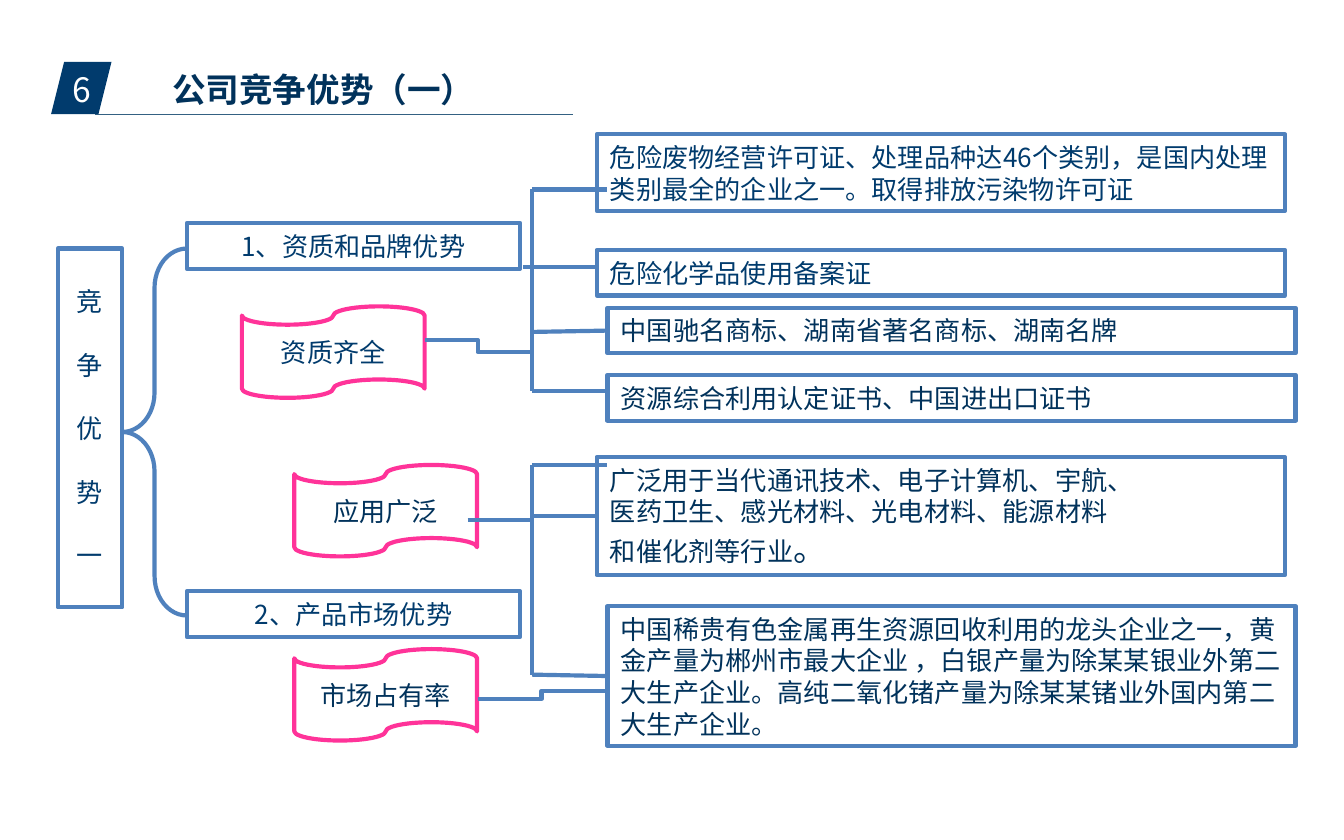
from pptx import Presentation
from pptx.dml.color import RGBColor
from pptx.enum.shapes import MSO_CONNECTOR, MSO_SHAPE
from pptx.enum.text import MSO_ANCHOR, PP_ALIGN
from pptx.oxml.ns import qn
from pptx.util import Inches, Pt
from lxml import etree

RECT, TAPE = MSO_SHAPE.RECTANGLE, MSO_SHAPE.FLOWCHART_PUNCHED_TAPE
BRACE, SLANT = MSO_SHAPE.LEFT_BRACE, MSO_SHAPE.PARALLELOGRAM
STRAIGHT, ELBOW = MSO_CONNECTOR.STRAIGHT, MSO_CONNECTOR.ELBOW
LEFT, CENTER = PP_ALIGN.LEFT, PP_ALIGN.CENTER
TOP, MIDDLE = MSO_ANCHOR.TOP, MSO_ANCHOR.MIDDLE
LEFT_SIDE = 1

FONT = "Noto Sans CJK SC"
NAVY, DARK, BLUE, PINK, RULE, WHITE = "013B6D", "01325B", "4F81BD", "FF3399", "346182", "FFFFFF"
COLS, ROWS = 100, 62.5
CELL = Inches(10) / COLS
LEAF_W, TAPE_W, TAPE_H, HEAD_W, LINE_H = 51.2, 13.6, 6.8, 24.8, 3.4


def grid(*cells):
    return [round(c * CELL) for c in cells]


def rgb(value):
    return RGBColor.from_string(value)


def write(sp, paragraphs, color, align=LEFT, anchor=TOP, wrap=True, gap=0, bold=False):
    """Fill a shape with paragraphs, each a list of (text, size) runs."""
    tf = sp.text_frame
    tf.word_wrap, tf.vertical_anchor = wrap, anchor
    tf.margin_left = tf.margin_right = Inches(0.1)
    tf.margin_top = tf.margin_bottom = Inches(0.05)
    for i, runs in enumerate(paragraphs):
        p = tf.add_paragraph() if i else tf.paragraphs[0]
        p.alignment = align
        p.line_spacing = Pt(round(1.2 * max(size for _, size in runs)))
        p.space_before = Pt(gap if i else 0)
        for text, size in runs:
            r = p.add_run()
            r.text = text
            r.font.size, r.font.bold, r.font.name = Pt(size), bold, FONT
            r.font.color.rgb = rgb(color)
            etree.SubElement(r.font._element, qn("a:ea"), typeface=FONT)


def outline(s, kind, x, y, w, h, color=BLUE):
    sp = s.shapes.add_shape(kind, *grid(x, y, w, h))
    sp.shadow.inherit = False
    sp.fill.background()
    sp.line.color.rgb, sp.line.width = rgb(color), Pt(2.25)
    return sp


def connect(s, x1, y1, x2, y2, kind=STRAIGHT, color=BLUE, width=2.25):
    c = s.shapes.add_connector(kind, *grid(x1, y1, x2, y2))
    c.line.color.rgb, c.line.width = rgb(color), Pt(width)
    etree.SubElement(c._element.spPr, qn("a:effectLst"))
    return c


def header(s, x, y, number, title):
    connect(s, x + 3.3, y + 3.9, x + 38.8, y + 3.9, color=RULE, width=0.75)
    sp = outline(s, SLANT, x, y, 4.5, 3.9)
    sp.fill.solid()
    sp.fill.fore_color.rgb = rgb(NAVY)
    sp.line.fill.background()
    tb = s.shapes.add_textbox(*grid(x + 0.5, y, 3.5, 4))
    write(tb, [[(number, 18)]], WHITE, CENTER, wrap=False)
    sp = s.shapes.title
    sp.left, sp.top, sp.width, sp.height = grid(x + 8, y, 24.7, 4)
    write(sp, [[(title, 18)]], DARK, wrap=False, bold=True)


def trunk(s, x, y, root, heads):
    """Root box, brace and the two headings the brace points to."""
    sp = outline(s, RECT, x, y, 4.8, 26.7)
    write(sp, [[(char, 14)] for char in root], NAVY, CENTER, MIDDLE, wrap=False, gap=17)
    sp = outline(s, BRACE, x + 4.8, y, 4.8, 27.3)
    sp.adjustments[0] = 0.61
    for i, head in enumerate(heads):
        sp = outline(s, RECT, x + 9.6, y - 1.9 + i * 27.4, HEAD_W, LINE_H)
        write(sp, [[(head, 14)]], NAVY, CENTER)


def branch(s, x, y, spine, leaves, tapes, twigs, elbows):
    """Spine from (x, y) down; all other places are offsets from its top.

    Twigs and elbows end with the index of the leaf they join, or None."""
    boxes = []
    for dx, dy, h, color, paragraphs in leaves:
        sp = outline(s, RECT, x + dx, y + dy, LEAF_W, h)
        write(sp, paragraphs, color)
        boxes.append(sp)
    for dx, dy, color, text in tapes:
        sp = outline(s, TAPE, x + dx, y + dy, TAPE_W, TAPE_H, PINK)
        write(sp, [[(text, 14)]], color, CENTER, MIDDLE, wrap=False)
    connect(s, x, y, x, y + spine)
    links = [(STRAIGHT, dx, dy, dx + 5.6, dy, leaf) for dx, dy, leaf in twigs]
    links += [(ELBOW, *elbow) for elbow in elbows]
    for kind, x1, y1, x2, y2, leaf in links:
        c = connect(s, x + x1, y + y1, x + x2, y + y2, kind)
        if leaf is not None:
            c.end_connect(boxes[leaf], LEFT_SIDE)


def main():
    prs = Presentation()
    prs.slide_width, prs.slide_height = grid(COLS, ROWS)
    s = prs.slides.add_slide(prs.slide_layouts[5])
    header(s, 3.8, 4.6, "6", "公司竞争优势（一）")
    trunk(s, 4.3, 18.5, "竞争优势一", ["1、资质和品牌优势", "2、产品市场优势"])
    branch(
        s, 39.6, 14.1, 15,
        leaves=[
            (4.8, -4.1, 5.7, NAVY, [[("危险废物经营许可证、处理品种达46个类别，是国内处理类别最全的企业之一。"
                                      "取得排放污染物许可证", 14)]]),
            (4.8, 4.5, LINE_H, NAVY, [[("危险化学品使用备案证", 14)]]),
            (5.6, 8.8, LINE_H, DARK, [[("中国驰名商标、湖南省著名商标、湖南名牌", 14)]]),
            (5.6, 13.8, LINE_H, DARK, [[("资源综合利用认定证书、中国进出口证书", 14)]]),
        ],
        tapes=[(-21.6, 8.7, NAVY, "资质齐全")],
        twigs=[(0, 0, None), (-0.7, 5.75, None), (0, 10.6, 2), (0, 15, None)],
        elbows=[(-8, 11.2, -0.1, 12.1, None)],
    )
    branch(
        s, 39.6, 34.6, 15.6,
        leaves=[
            (4.8, -0.6, 8.8, DARK, [
                [("广泛用于当代通讯技术、电子计算机、宇航、", 14)],
                [("医药卫生、感光材料、光电材料、能源材料", 14)],
                [("和催化剂等行业", 14), ("。", 18)],
            ]),
            (5.6, 10.5, 10.4, DARK, [[("中国稀贵有色金属再生资源回收利用的龙头企业之一，黄金产量为郴州市最大企业 ，"
                                       "白银产量为除某某银业外第二大生产企业。"
                                       "高纯二氧化锗产量为除某某锗业外国内第二大生产企业。", 14)]]),
        ],
        tapes=[(-17.7, 0, DARK, "应用广泛"), (-17.7, 13.7, DARK, "市场占有率")],
        twigs=[(0, 0, None), (0, 15.6, 1)],
        elbows=[(-4.8, 4.1, 4.8, 3.8, 0), (-4, 17.4, 5.4, 16.8, None)],
    )
    prs.save("out.pptx")


if __name__ == "__main__":
    main()
